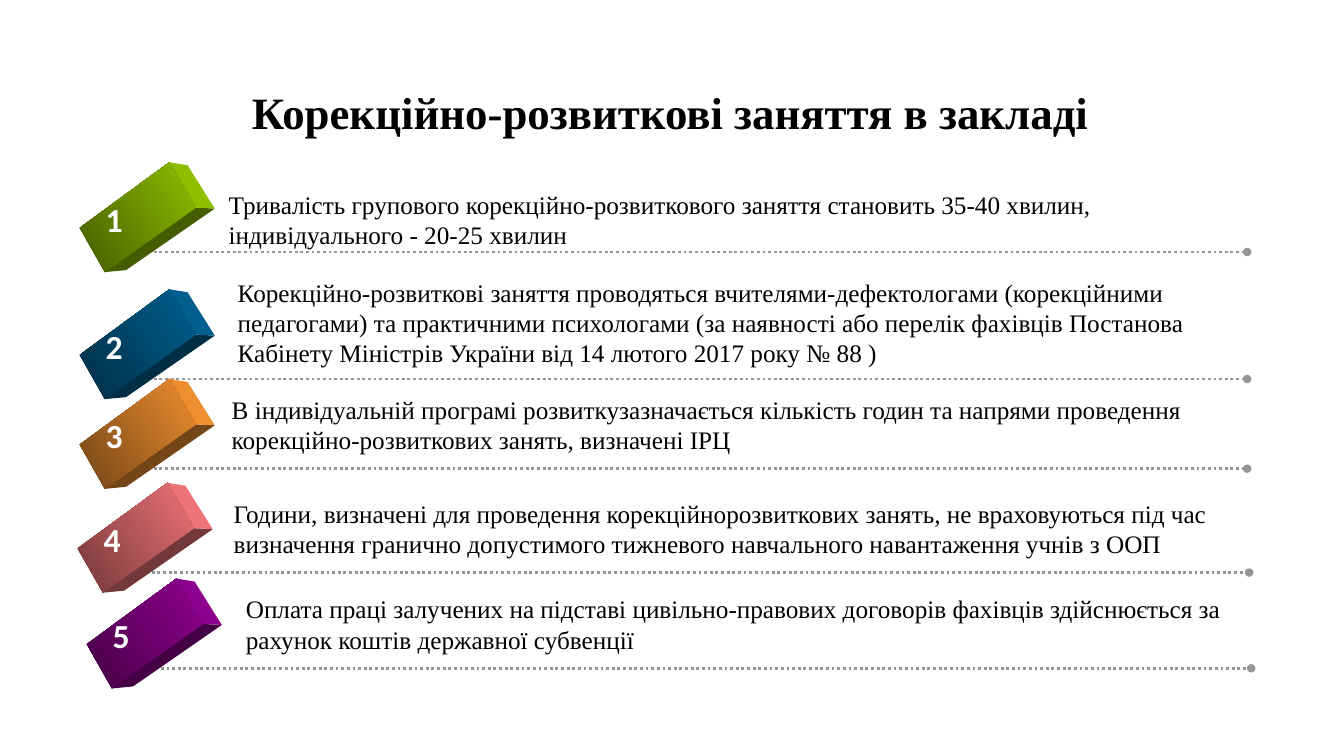
from lxml import etree
from pptx import Presentation
from pptx.dml.color import RGBColor
from pptx.enum.dml import MSO_LINE
from pptx.enum.shapes import MSO_CONNECTOR
from pptx.enum.text import MSO_ANCHOR, PP_ALIGN
from pptx.oxml.ns import qn
from pptx.util import Inches, Pt

STRAIGHT = MSO_CONNECTOR.STRAIGHT
DOTTED = MSO_LINE.ROUND_DOT
LEFT, CENTER = PP_ALIGN.LEFT, PP_ALIGN.CENTER
TOP, MIDDLE = MSO_ANCHOR.TOP, MSO_ANCHOR.MIDDLE
SERIF, SANS = "Times New Roman", "Calibri"

# Faces of a block, in inches from its top left corner
FRONT = [(0, 0.65), (0.89, 0), (1.15, 0.45), (0.25, 1.09)]
END = [(0.89, 0), (1.07, 0.03), (1.34, 0.46), (1.15, 0.45)]
UNDERSIDE = [(0.25, 1.09), (1.15, 0.45), (1.34, 0.46), (0.46, 1.07)]

# Block left and top, line end, colour, text box (left, top, width, height), text
ROWS = [
    (0.79, 1.61, 12.37, "99CC00", (2.17, 1.83, 10.21, 0.71),
     "Тривалість групового корекційно-розвиткового заняття становить 35-40 хвилин,\n"
     "індивідуального - 20-25 хвилин"),
    (0.79, 2.87, 12.37, "006699", (2.26, 2.7, 10.2, 1.01),
     "Корекційно-розвиткові заняття проводяться вчителями-дефектологами (корекційними\n"
     "педагогами) та практичними психологами (за наявності або перелік фахівців "
     "Постанова Кабінету Міністрів України від 14 лютого 2017 року № 88 )"),
    (0.79, 3.76, 12.37, "FF9933", (2.2, 3.86, 10.06, 0.71),
     "В індивідуальній програмі розвиткузазначається кількість годин та напрями "
     "проведення корекційно-розвиткових занять, визначені ІРЦ"),
    (0.77, 4.79, 12.39, "FF7C80", (2.22, 4.89, 10.13, 0.71),
     "Години, визначені для проведення корекційнорозвиткових занять, не враховуються під час\n"
     "визначення гранично допустимого тижневого навчального навантаження учнів з ООП"),
    (0.86, 5.74, 12.41, "990099", (2.34, 5.84, 10.04, 0.71),
     "Оплата праці залучених на підставі цивільно-правових договорів фахівців "
     "здійснюється за рахунок коштів державної субвенції"),
]


def rgb(color):
    return RGBColor.from_string(color)


def shade(color, factor):
    """Return the hex colour darkened by the factor."""
    channels = (int(color[i:i + 2], 16) for i in (0, 2, 4))
    return "".join(f"{round(channel * factor):02X}" for channel in channels)


def add_text(slide, text, box, size=18, font=SERIF, color="000000", bold=False,
             align=LEFT, anchor=TOP, spacing=1.0, wrap=True):
    text_box = slide.shapes.add_textbox(*(Inches(value) for value in box))
    frame = text_box.text_frame
    frame.word_wrap = wrap
    frame.vertical_anchor = anchor
    frame.text = text
    for paragraph in frame.paragraphs:
        paragraph.alignment = align
        paragraph.line_spacing = spacing
        paragraph.font.size = Pt(size)
        paragraph.font.name = font
        paragraph.font.bold = bold
        paragraph.font.color.rgb = rgb(color)


def add_dotted_line(slide, start, end, y):
    """Draw a dotted line with a round dot at its right end."""
    line = slide.shapes.add_connector(
        STRAIGHT, Inches(start), Inches(y), Inches(end), Inches(y))
    line.line.color.rgb = rgb("969696")
    line.line.width = Pt(2)
    line.line.dash_style = DOTTED
    etree.SubElement(line.line._get_or_add_ln(), qn("a:tailEnd"), type="oval")
    etree.SubElement(line._element.spPr, qn("a:effectLst"))


def add_face(slide, left, top, corners, color, end_color=None):
    """Draw one face of a block, with a gradient if an end colour is given."""
    points = [(Inches(left + x), Inches(top + y)) for x, y in corners]
    builder = slide.shapes.build_freeform(*points[0])
    builder.add_line_segments(points[1:], close=True)
    face = builder.convert_to_shape()
    face.shadow.inherit = False
    face.line.fill.background()
    if end_color is None:
        face.fill.solid()
        face.fill.fore_color.rgb = rgb(color)
        return
    face.fill.gradient()
    face.fill.gradient_angle = 33
    for stop, stop_color in zip(face.fill.gradient_stops, (color, end_color)):
        stop.color.rgb = rgb(stop_color)


def add_block(slide, left, top, color):
    add_face(slide, left, top, UNDERSIDE, shade(color, 0.45))
    add_face(slide, left, top, END, shade(color, 0.93))
    add_face(slide, left, top, FRONT, shade(color, 0.45), shade(color, 0.93))


def add_row(slide, number, left, top, line_end, color, text_place, text):
    add_dotted_line(slide, left + 0.68, line_end, top + 0.89)
    add_block(slide, left, top, color)
    add_text(slide, text, text_place)
    add_text(slide, str(number), (left + 0.16, top + 0.31, 0.36, 0.5),
             size=24, font=SANS, color="FFFFFF", bold=True, wrap=False)


def main():
    presentation = Presentation()
    presentation.slide_width = Inches(13.33)
    presentation.slide_height = Inches(7.5)
    slide = presentation.slides.add_slide(presentation.slide_layouts[6])
    add_text(slide, "Корекційно-розвиткові заняття в закладі", (0.9, 0.67, 11.5, 0.95),
             size=32, bold=True, align=CENTER, anchor=MIDDLE, spacing=0.9)
    for number, row in enumerate(ROWS, start=1):
        add_row(slide, number, *row)
    presentation.save("out.pptx")


if __name__ == "__main__":
    main()
